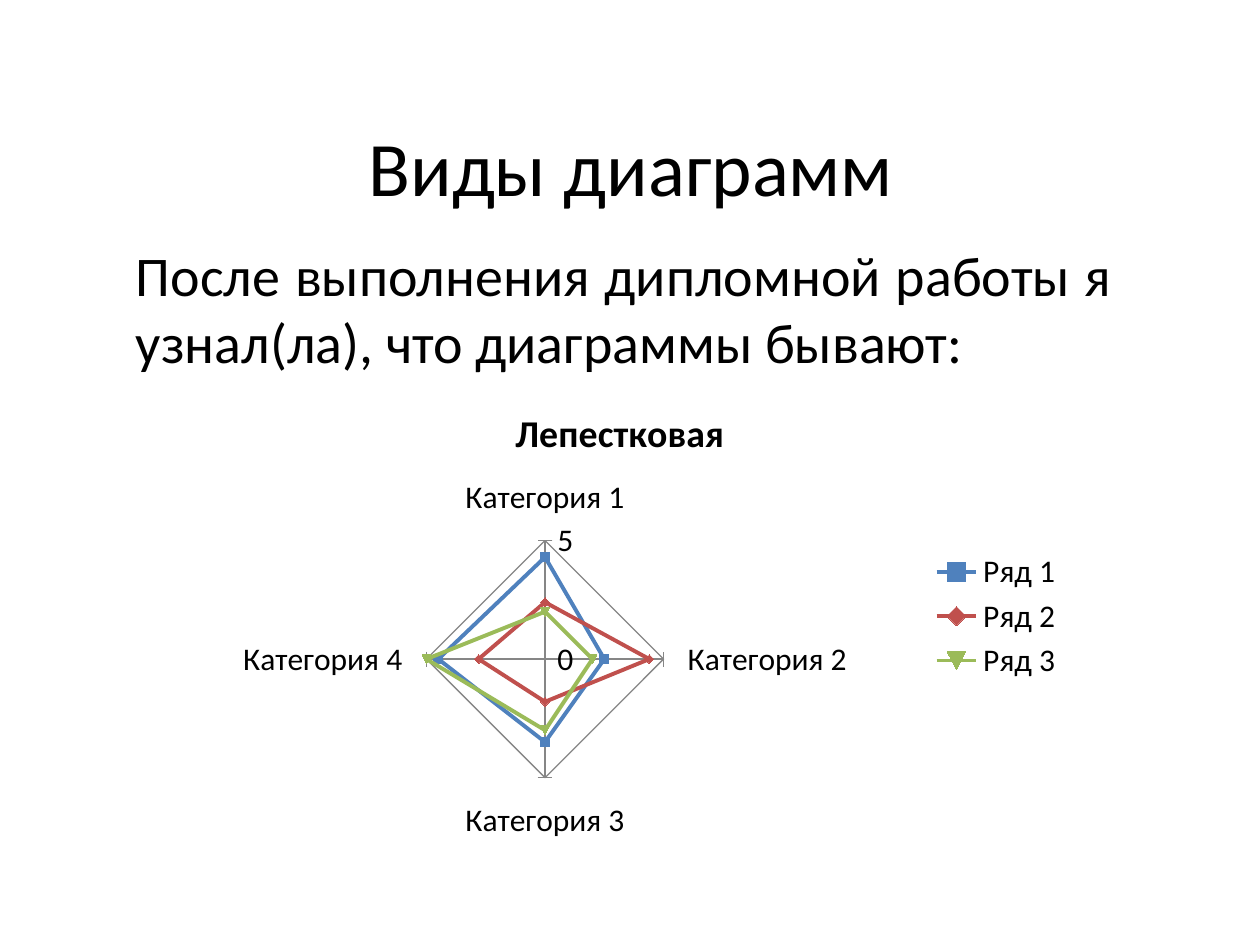
from pptx import Presentation
from pptx.chart.data import CategoryChartData
from pptx.dml.color import RGBColor
from pptx.enum.chart import XL_CHART_TYPE, XL_LEGEND_POSITION, XL_TICK_MARK
from pptx.enum.text import MSO_ANCHOR, PP_ALIGN
from pptx.util import Inches, Pt


def paint(font, size, bold=False, tone="000000"):
    font.name = "Calibri"
    font.size = Pt(size)
    font.bold = bold
    font.color.rgb = RGBColor.from_string(tone)


deck = Presentation()
deck.slide_width, deck.slide_height = Inches(10), Inches(7.5)
slide = deck.slides.add_slide(deck.slide_layouts[5])

# Title
title = slide.shapes.title
title.left, title.top = Inches(0.51), Inches(0.69)
title.width, title.height = Inches(9), Inches(1.25)
frame = title.text_frame
frame.text = "Виды диаграмм"
frame.vertical_anchor = MSO_ANCHOR.MIDDLE
frame.paragraphs[0].alignment = PP_ALIGN.CENTER
paint(frame.paragraphs[0].runs[0].font, 44)

# Lead text
box = slide.shapes.add_textbox(Inches(0.98), Inches(1.86), Inches(7.95), Inches(1.18))
frame = box.text_frame
frame.word_wrap = True
frame.text = "После выполнения дипломной работы я узнал(ла), что диаграммы бывают:"
frame.paragraphs[0].alignment = PP_ALIGN.JUSTIFY
paint(frame.paragraphs[0].runs[0].font, 32)

# Radar chart
rows = [
    ("Ряд 1", (4.3, 2.5, 3.5, 4.5), "4F81BD"),
    ("Ряд 2", (2.4, 4.4, 1.8, 2.8), "C0504D"),
    ("Ряд 3", (2, 2, 3, 5), "9BBB59"),
]
data = CategoryChartData()
data.categories = [f"Категория {n}" for n in range(1, 5)]
for name, vals, tone in rows:
    data.add_series(name, vals)
chart = slide.shapes.add_chart(
    XL_CHART_TYPE.RADAR_MARKERS,
    Inches(1.3), Inches(3.04), Inches(7.24), Inches(3.7), data,
).chart
paint(chart.font, 18)

# Chart title and legend
chart.has_title = True
frame = chart.chart_title.text_frame
frame.text = "Лепестковая"
paint(frame.paragraphs[0].runs[0].font, 21.6, bold=True)
chart.chart_title.include_in_layout = False
chart.has_legend = True
chart.legend.position = XL_LEGEND_POSITION.RIGHT
chart.legend.include_in_layout = False

# Axes
for axis in (chart.category_axis, chart.value_axis):
    axis.has_major_gridlines = True
    axis.major_tick_mark = XL_TICK_MARK.OUTSIDE
    axis.minor_tick_mark = XL_TICK_MARK.NONE
    for line in (axis.format.line, axis.major_gridlines.format.line):
        line.color.rgb = RGBColor.from_string("868686")
        line.width = Pt(0.75)
scale = chart.value_axis
scale.minimum_scale, scale.maximum_scale, scale.major_unit = 0, 5, 5
scale.tick_labels.number_format = "General"
scale.tick_labels.number_format_is_linked = False

# Series colours
plot = chart.plots[0]
plot.vary_by_categories = False
for row, (name, vals, tone) in zip(plot.series, rows):
    row.smooth = False
    row.format.line.width = Pt(2.25)
    row.format.line.color.rgb = RGBColor.from_string(tone)
    mark = row.marker.format
    mark.fill.solid()
    mark.fill.fore_color.rgb = RGBColor.from_string(tone)
    mark.line.color.rgb = RGBColor.from_string(tone)

deck.save("out.pptx")
